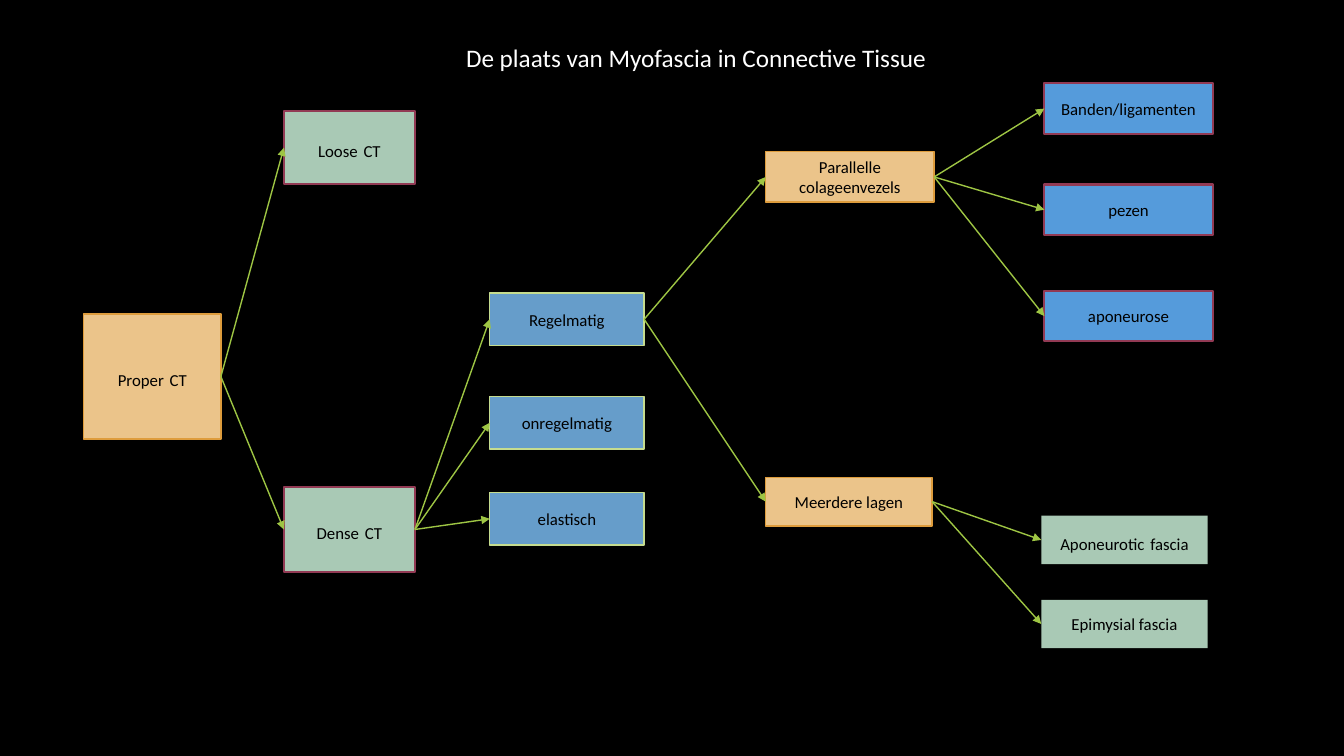
from pptx import Presentation
from pptx.dml.color import RGBColor
from pptx.enum.shapes import MSO_CONNECTOR, MSO_SHAPE
from pptx.enum.text import MSO_ANCHOR, PP_ALIGN
from pptx.oxml.ns import qn
from pptx.util import Pt
from lxml.etree import SubElement

COLORS = {
    "black": "000000", "white": "FFFFFF", "arrow": "9EC544",
    "sand": "EBC48A", "orange": "DE9C3C", "sage": "A9C9B5", "plum": "923A54",
    "steel": "669DCA", "lime": "C5DC8F", "sky": "559BDB",
}
STYLES = {
    "root": ("sand", "orange", 1),
    "class": ("sage", "plum", 1.5),
    "pattern": ("steel", "lime", 1),
    "structure": ("sky", "plum", 1.5),
    "fascia": ("sage", None, 0),
}


def color(name):
    return RGBColor.from_string(COLORS[name])


def add_run(p, text, size=12, font_color="black"):
    r = p.add_run()
    r.text = text
    for key, value in {"name": "Calibri", "size": Pt(size), "bold": False}.items():
        setattr(r.font, key, value)
    r.font.color.rgb = color(font_color)


def add_title(s, box, text):
    sp = s.shapes.title
    for key, value in zip(("left", "top", "width", "height"), box):
        setattr(sp, key, Pt(value))
    tf = sp.text_frame
    for key, value in {"word_wrap": True, "vertical_anchor": MSO_ANCHOR.MIDDLE}.items():
        setattr(tf, key, value)
    p = tf.paragraphs[0]
    p.alignment = PP_ALIGN.CENTER
    add_run(p, text, 18, "white")


def add_node(s, box, words, style):
    fill, line, weight = STYLES[style]
    sp = s.shapes.add_shape(MSO_SHAPE.RECTANGLE, *map(Pt, box))
    sp.shadow.inherit = False
    sp.fill.solid()
    sp.fill.fore_color.rgb = color(fill)
    if line:
        sp.line.color.rgb = color(line)
        sp.line.width = Pt(weight)
    else:
        sp.line.fill.background()
    tf = sp.text_frame
    for key, value in {"word_wrap": True, "vertical_anchor": MSO_ANCHOR.MIDDLE}.items():
        setattr(tf, key, value)
    p = tf.paragraphs[0]
    p.alignment = PP_ALIGN.CENTER
    for i, word in enumerate(words):
        if i:
            add_run(p, " ", 18)
        add_run(p, word)
    return sp


def add_column(s, box, style, nodes):
    left, top, width, height = box
    return [add_node(s, (left, top + offset, width, height), words, style)
            for offset, words in nodes]


def add_branches(s, parent, children):
    for child in children:
        c = s.shapes.add_connector(MSO_CONNECTOR.STRAIGHT, 0, 0, 0, 0)
        c.begin_connect(parent, 3)
        c.end_connect(child, 1)
        c.line.color.rgb = color("arrow")
        c.line.width = Pt(1)
        spPr = c._element.spPr
        SubElement(spPr.find(qn("a:ln")), qn("a:tailEnd"), type="triangle")
        SubElement(spPr, qn("a:effectLst"))


def add_tissue_tree(s, left, top):
    proper = add_node(s, (left, top + 164.8, 98, 89.2), ("Proper", "CT"), "root")
    loose = add_node(s, (left + 143, top + 20, 93.6, 51.8), ("Loose", "CT"), "class")
    dense = add_node(s, (left + 143, top + 288, 93.6, 61.2), ("Dense", "CT"), "class")
    patterns = add_column(s, (left + 290, top + 149.7, 110.3, 37.6), "pattern", [
        (0, ("Regelmatig",)), (73.9, ("onregelmatig",)), (142.5, ("elastisch",))])
    parallel = add_node(s, (left + 487.2, top + 48.8, 120.3, 36),
                        ("Parallelle colageenvezels",), "root")
    layered = add_node(s, (left + 487.2, top + 281.4, 118.8, 34.6),
                       ("Meerdere lagen",), "root")
    structures = add_column(s, (left + 686.2, top, 120.3, 36), "structure", [
        (0, ("Banden/ligamenten",)), (72.2, ("pezen",)), (148.2, ("aponeurose",))])
    fascias = add_column(s, (left + 684, top + 308.8, 118.8, 34.6), "fascia", [
        (0, ("Aponeurotic", "fascia")), (60, ("Epimysial fascia",))])
    add_branches(s, proper, [loose, dense])
    add_branches(s, dense, patterns)
    add_branches(s, patterns[0], [parallel, layered])
    add_branches(s, parallel, structures)
    add_branches(s, layered, fascias)


def main():
    prs = Presentation()
    prs.slide_width, prs.slide_height = Pt(960), Pt(540)
    s = prs.slides.add_slide(prs.slide_layouts[5])
    s.background.fill.solid()
    s.background.fill.fore_color.rgb = color("black")
    add_title(s, (311.8, 26.2, 370.8, 29), "De plaats van Myofascia in Connective Tissue")
    add_tissue_tree(s, 59.8, 59.6)
    prs.save("out.pptx")


if __name__ == "__main__":
    main()
